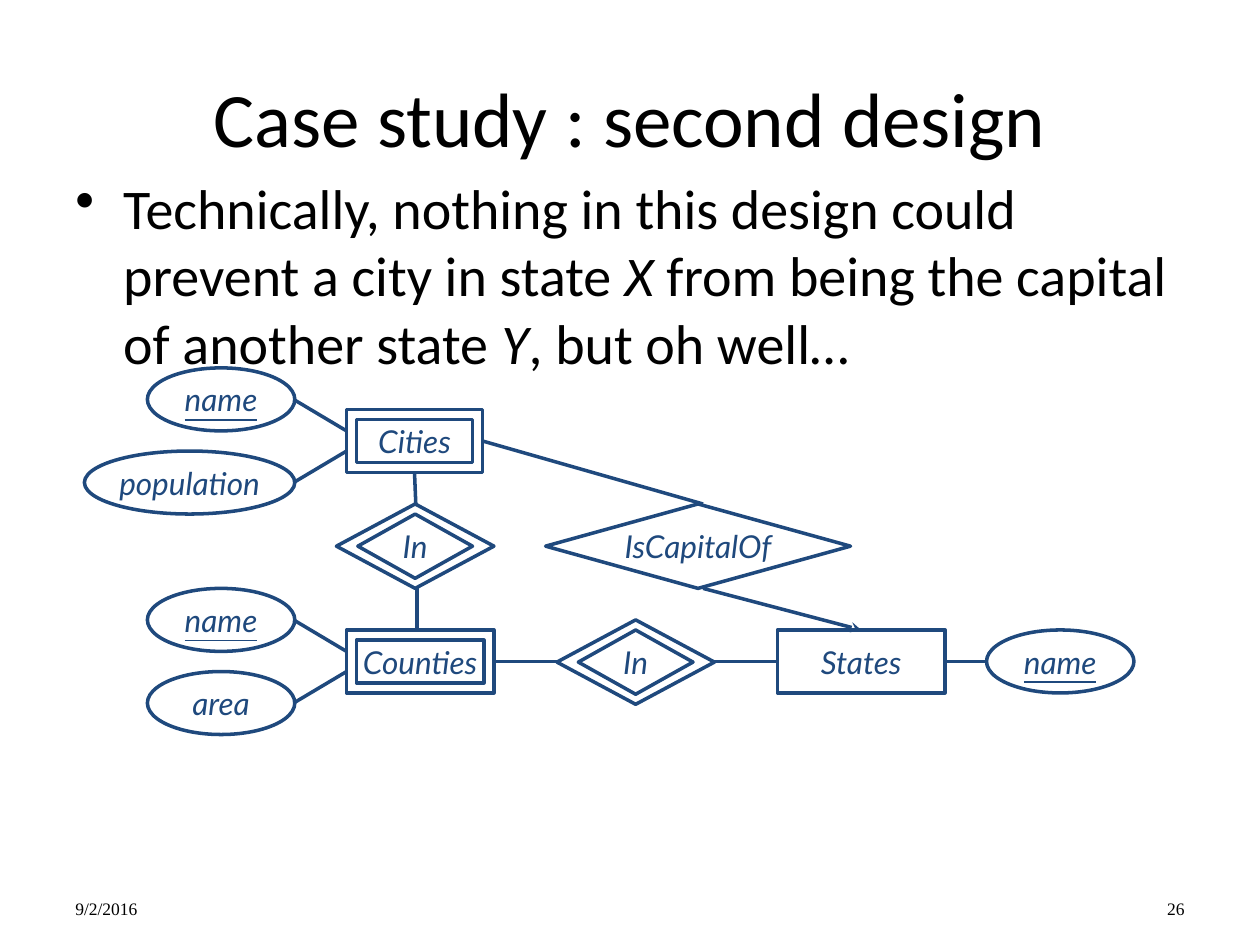
import pptx
import pptx.util
import pptx.dml.color
import pptx.enum.shapes
import pptx.enum.text
import pptx.oxml
import pptx.oxml.ns

Inches, Pt = pptx.util.Inches, pptx.util.Pt
KIND = pptx.enum.shapes.MSO_SHAPE
ALIGN = pptx.enum.text.PP_ALIGN
ANCHOR = pptx.enum.text.MSO_ANCHOR
COLORS = {"text": "000000", "ink": "1F497D"}

TITLE = "Case study : second design"
BODY = [  # text, italic
    ("Technically, nothing in this design could prevent a city in state ", False),
    ("X", True),
    (" from being the capital of another state ", False),
    ("Y", True),
    (", but oh well…", False),
]
RECT, OVAL, DIAMOND = KIND.RECTANGLE, KIND.OVAL, KIND.FLOWCHART_DECISION
INSET = {RECT: (0.08, 0.08), DIAMOND: (0.17, 0.08)}
NODES = [  # id, label, kind, box, weak (double outline), key (underlined)
    ("cities", "Cities", RECT, (2.75, 3.25, 1.08, 0.5), True, False),
    ("capital", "IsCapitalOf", DIAMOND, (4.33, 4, 2.42, 0.67), False, False),
    ("city name", "name", OVAL, (1.17, 2.92, 1.17, 0.5), False, True),
    ("population", "population", OVAL, (0.67, 3.58, 1.67, 0.5), False, False),
    ("counties", "Counties", RECT, (2.75, 5, 1.17, 0.5), True, False),
    ("county name", "name", OVAL, (1.17, 4.67, 1.17, 0.5), False, True),
    ("area", "area", OVAL, (1.17, 5.33, 1.17, 0.5), False, False),
    ("state name", "name", OVAL, (7.83, 5, 1.17, 0.5), False, True),
    ("city in", "In", DIAMOND, (2.67, 4, 1.25, 0.67), True, False),
    ("county in", "In", DIAMOND, (4.42, 4.92, 1.25, 0.67), True, False),
    ("states", "States", RECT, (6.17, 5, 1.33, 0.5), False, False),
]
TOP, LEFT, BOTTOM, RIGHT = range(4)
LINKS = [  # from, to, joined start, joined end, arrow
    ((3.83, 3.5), (5.58, 4), ("cities", RIGHT), None, False),
    ((2.33, 3.17), (2.75, 3.42), None, None, False),
    ((2.75, 3.58), (2.33, 3.83), None, None, False),
    ((3.3, 3.75), (3.3, 4), ("cities", BOTTOM), None, False),
    ((3.31, 4.67), (3.31, 5), None, None, False),
    ((2.33, 4.92), (2.75, 5.17), None, None, False),
    ((2.75, 5.33), (2.33, 5.58), None, None, False),
    ((7.5, 5.25), (7.83, 5.25), ("states", RIGHT), None, False),
    ((3.92, 5.25), (4.42, 5.25), ("counties", RIGHT), None, False),
    ((5.67, 5.25), (6.17, 5.25), None, ("states", LEFT), False),
    ((5.58, 4.67), (6.83, 5), None, ("states", TOP), True),
]
FOOTERS = [("26", 7.17, ALIGN.RIGHT), ("9/2/2016", 0.5, ALIGN.LEFT)]


def color(name):
    return pptx.dml.color.RGBColor.from_string(COLORS[name])


def style(font, name, size, ink="text"):
    font.name, font.size = name, Pt(size)
    font.color.rgb = color(ink)


def child(parent, tag, **attrs):
    node = pptx.oxml.parse_xml(f"<{tag} {pptx.oxml.ns.nsdecls('a')}/>")
    for key, value in attrs.items():
        node.set(key, value)
    parent.append(node)


def stroke(line):
    line.color.rgb = color("ink")
    line.width = Pt(2)


def outline(slide, kind, box):
    shape = slide.shapes.add_shape(kind, *map(Inches, box))
    shape.shadow.inherit = False
    shape.fill.background()
    stroke(shape.line)
    return shape


def add_node(slide, label, kind, box, weak, key):
    shape = outline(slide, kind, box)
    frame = shape.text_frame
    frame.word_wrap = False
    frame.vertical_anchor = ANCHOR.MIDDLE
    para = frame.paragraphs[0]
    para.text, para.alignment = label, ALIGN.CENTER
    style(para.font, "Lato", 18, "ink")
    para.font.italic = True
    if key:
        para.font.underline = True
    if weak:
        x, y, w, h = box
        dx, dy = INSET[kind]
        outline(slide, kind, (x + dx, y + dy, w - 2 * dx, h - 2 * dy))
    return shape


def add_link(slide, nodes, start, end, source, target, arrow):
    link = slide.shapes.add_connector(
        pptx.enum.shapes.MSO_CONNECTOR.STRAIGHT, *map(Inches, start + end))
    stroke(link.line)
    if source:
        link.begin_connect(nodes[source[0]], source[1])
    if target:
        link.end_connect(nodes[target[0]], target[1])
    props = link._element.spPr
    if arrow:
        child(props.find(pptx.oxml.ns.qn("a:ln")), "a:tailEnd", type="stealth")
    child(props, "a:effectLst")


def add_text(slide, box):
    frame = slide.shapes.add_textbox(*map(Inches, box)).text_frame
    frame.word_wrap = True
    return frame.paragraphs[0]


def add_body(slide):
    para = add_text(slide, (0.5, 1.33, 9, 5.4))
    style(para.font, "Calibri", 32)
    for text, italic in BODY:
        run = para.add_run()
        run.text, run.font.italic = text, italic
    props = para._p.get_or_add_pPr()
    props.set("marL", str(Inches(0.38)))
    props.set("indent", str(Inches(-0.38)))
    bullet = pptx.oxml.parse_xml(
        f"<a:buChar {pptx.oxml.ns.nsdecls('a')} char='•'/>")
    props.insert(0, bullet)


def main():
    deck = pptx.Presentation()
    deck.slide_width, deck.slide_height = Inches(10), Inches(7.5)
    slide = deck.slides.add_slide(deck.slide_layouts[5])

    title = slide.shapes.title
    title.left, title.top, title.width, title.height = map(
        Inches, (0.5, 0.3, 9, 1.25))
    title.text_frame.vertical_anchor = ANCHOR.MIDDLE
    para = title.text_frame.paragraphs[0]
    para.text, para.alignment = TITLE, ALIGN.CENTER
    style(para.font, "Calibri", 44)

    add_body(slide)
    nodes = {name: add_node(slide, *rest) for name, *rest in NODES}
    for link in LINKS:
        add_link(slide, nodes, *link)
    for text, left, align in FOOTERS:
        para = add_text(slide, (left, 7.08, 2.33, 0.25))
        para.text, para.alignment = text, align
        style(para.font, "Times New Roman", 10)
    deck.save("out.pptx")


if __name__ == "__main__":
    main()
